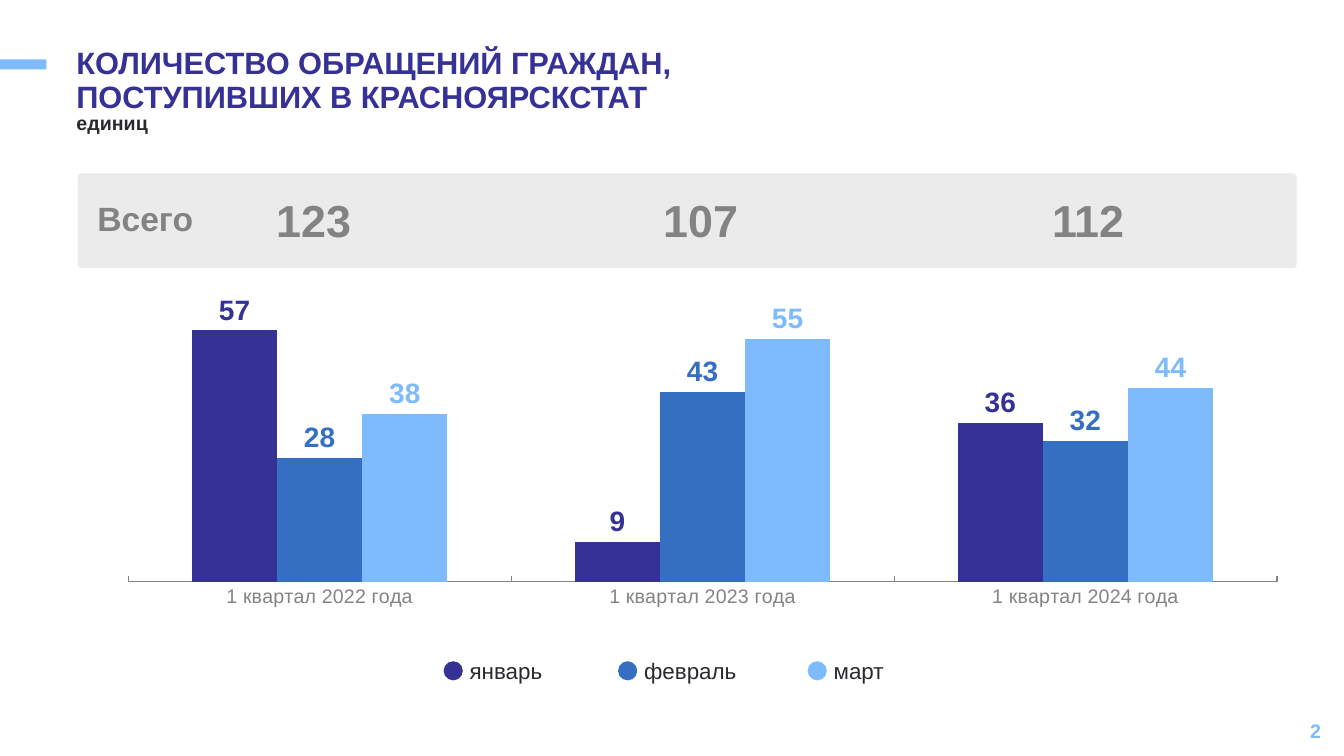
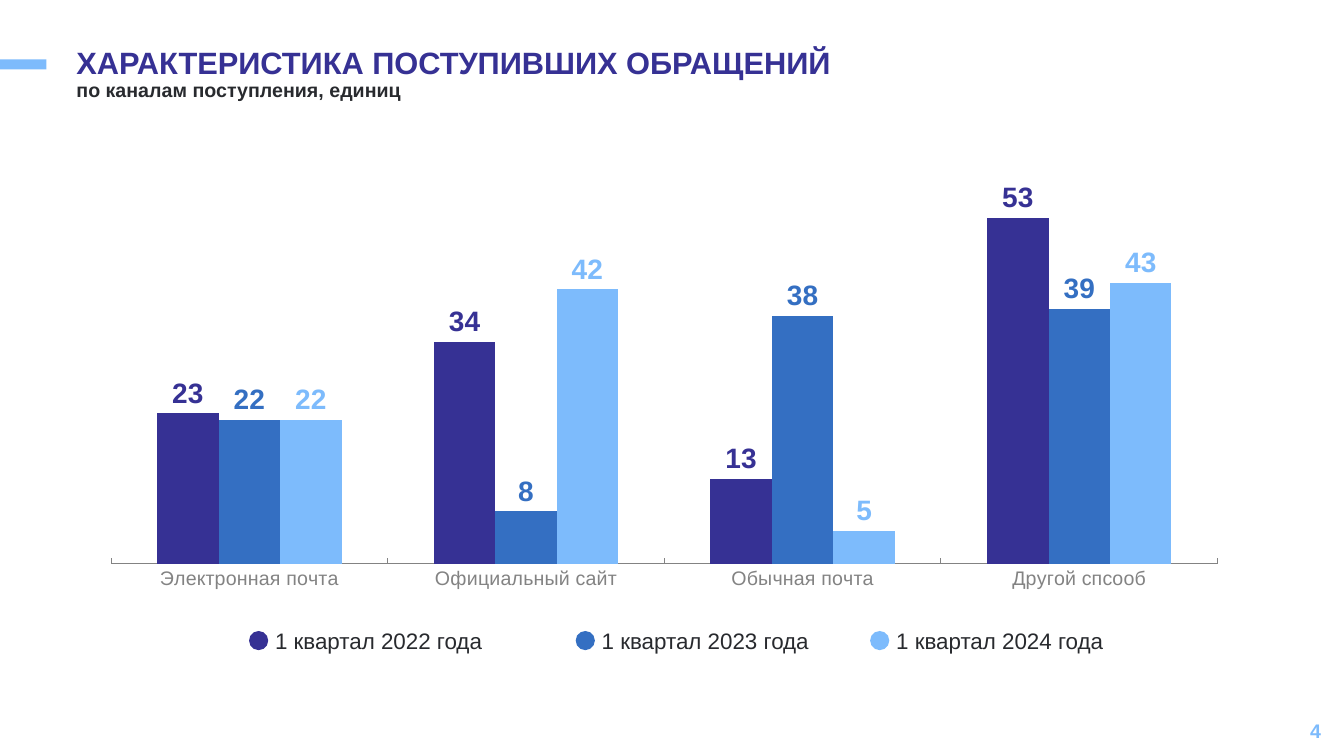
from dataclasses import dataclass

from lxml import etree
from pptx import Presentation
from pptx.chart.data import CategoryChartData
from pptx.dml.color import RGBColor
from pptx.enum import chart as charts, shapes, text
from pptx.oxml.ns import qn
from pptx.util import Emu, Pt

PX = 9144  # 100 px to the inch


@dataclass(frozen=True)
class Theme:
    font: str = "Arial"
    navy: str = "363194"
    blue: str = "346FC2"
    sky: str = "7DBBFC"
    ink: str = "282A2E"
    gray: str = "838383"
    pale: str = "EBEBEB"
    title: int = 22
    small: int = 14
    legend: int = 16
    value: int = 20
    label: int = 24
    total: int = 32


T = Theme()
HUES = (T.navy, T.blue, T.sky)
SHAPE = shapes.MSO_SHAPE
ALIGN = text.PP_ALIGN

SLIDES = [
    {
        "page": 2,
        "title": "КОЛИЧЕСТВО ОБРАЩЕНИЙ ГРАЖДАН,\nПОСТУПИВШИХ В КРАСНОЯРСКСТАТ",
        "sub": ("единиц", 108),
        "totals": ("Всего", [123, 107, 112]),
        "chart": {
            "box": (112, 187, 1171, 433),
            "plot": (0.013, 0.295, 0.973, 0.606),
            "cats": ["1 квартал 2022 года", "1 квартал 2023 года",
                     "1 квартал 2024 года"],
            "series": [("январь", [57, 9, 36]),
                       ("февраль", [28, 43, 32]),
                       ("март", [38, 55, 44])],
        },
        "legend": {"left": (440, 613, 801), "top": 647, "wide": 115},
    },
    {
        "page": 4,
        "title": "ХАРАКТЕРИСТИКА ПОСТУПИВШИХ ОБРАЩЕНИЙ",
        "sub": ("по каналам поступления, единиц", 75),
        "chart": {
            "box": (85, 160, 1148, 446),
            "plot": (0.022, 0.024, 0.956, 0.871),
            "cats": ["Электронная почта", "Официальный сайт",
                     "Обычная почта", "Другой спсооб"],
            "series": [("1 квартал 2022 года", [23, 34, 13, 53]),
                       ("1 квартал 2023 года", [22, 8, 38, 39]),
                       ("1 квартал 2024 года", [22, 42, 5, 43])],
        },
        "legend": {"left": (247, 571, 863), "top": 617, "wide": 240},
    },
]


def px(*nums):
    return [Emu(n * PX) for n in nums]


def style(font, size, hue, bold=False):
    font.name, font.size, font.bold = T.font, Pt(size), bold
    font.color.rgb = RGBColor.from_string(hue)


def paint(fill, hue):
    fill.solid()
    fill.fore_color.rgb = RGBColor.from_string(hue)


def write(slide, words, box, size, hue, bold=True, align=ALIGN.LEFT,
          anchor=text.MSO_ANCHOR.TOP, lead=1.0):
    frame = slide.shapes.add_textbox(*px(*box)).text_frame
    frame.word_wrap = True
    frame.vertical_anchor = anchor
    para = frame.paragraphs[0]
    para.text = str(words)
    para.alignment, para.line_spacing = align, lead
    style(para.font, size, hue, bold)


def draw(slide, kind, box, hue):
    shape = slide.shapes.add_shape(kind, *px(*box))
    shape.shadow.inherit = False
    paint(shape.fill, hue)
    shape.line.fill.background()
    return shape


def base(slide, page, title, sub):
    """Put the accent, page number and headings on a slide."""
    draw(slide, SHAPE.RECTANGLE, (0, 59, 46, 10), T.sky)
    write(slide, page, (1020, 705, 300, 40), T.small, T.sky,
          align=ALIGN.RIGHT, anchor=text.MSO_ANCHOR.MIDDLE)
    write(slide, title, (66, 43, 866, 57), T.title, T.navy, lead=0.9)
    words, top = sub
    write(slide, words, (66, top, 866, 40), T.small, T.ink, lead=0.9)


def sums(slide, label, totals):
    """Draw the gray band with one total for each group of columns."""
    band = draw(slide, SHAPE.ROUNDED_RECTANGLE, (77, 172, 1209, 94), T.pale)
    band.adjustments[0] = 0.04
    write(slide, label, (77, 191, 134, 57), T.label, T.gray,
          align=ALIGN.CENTER)
    for i, total in enumerate(totals):
        write(slide, total, (172 + 384 * i, 186, 279, 55), T.total, T.gray,
              align=ALIGN.CENTER)


def place(chart, plot):
    """Fix the inner plot area as fractions of the chart."""
    area = chart.element.find(".//" + qn("c:plotArea"))
    for old in area.findall(qn("c:layout")):
        area.remove(old)
    layout = etree.Element(qn("c:layout"))
    spot = etree.SubElement(layout, qn("c:manualLayout"))
    parts = [("layoutTarget", "inner"), ("xMode", "edge"), ("yMode", "edge")]
    for tag, val in parts + list(zip("xywh", plot)):
        etree.SubElement(spot, qn("c:" + tag), val=str(val))
    area.insert(0, layout)


def graph(slide, box, plot, cats, series):
    data = CategoryChartData()
    data.categories = cats
    for name, vals in series:
        data.add_series(name, vals)
    kind = charts.XL_CHART_TYPE.COLUMN_CLUSTERED
    chart = slide.shapes.add_chart(kind, *px(*box), data).chart
    chart.has_title = chart.has_legend = False
    style(chart.font, T.small, T.ink)

    axis = chart.category_axis
    axis.major_tick_mark = charts.XL_TICK_MARK.INSIDE
    axis.has_major_gridlines = False
    axis.format.line.width = Pt(0.75)
    axis.format.line.color.rgb = RGBColor.from_string(T.gray)
    style(axis.tick_labels.font, T.small, T.gray)

    scale = chart.value_axis
    scale.minimum_scale, scale.maximum_scale = 0, 60
    scale.has_major_gridlines = scale.visible = False

    bars = chart.plots[0]
    bars.gap_width, bars.overlap, bars.vary_by_categories = 150, 0, False
    for row, hue in zip(bars.series, HUES):
        paint(row.format.fill, hue)
        tags = row.data_labels
        tags.show_value = True
        tags.position = charts.XL_LABEL_POSITION.OUTSIDE_END
        style(tags.font, T.value, hue, True)
    place(chart, plot)


def legend(slide, names, left, top, wide):
    for name, x, hue in zip(names, left, HUES):
        draw(slide, SHAPE.OVAL, (x, top + 9, 19, 19), hue)
        write(slide, name, (x + 16, top, wide, 37), T.legend, T.ink, False)


def main():
    deck = Presentation()
    deck.slide_width, deck.slide_height = px(1333, 750)
    for item in SLIDES:
        slide = deck.slides.add_slide(deck.slide_layouts[6])
        base(slide, item["page"], item["title"], item["sub"])
        if "totals" in item:
            sums(slide, *item["totals"])
        graph(slide, **item["chart"])
        names = [name for name, vals in item["chart"]["series"]]
        legend(slide, names, **item["legend"])
    deck.save("out.pptx")


if __name__ == "__main__":
    main()
